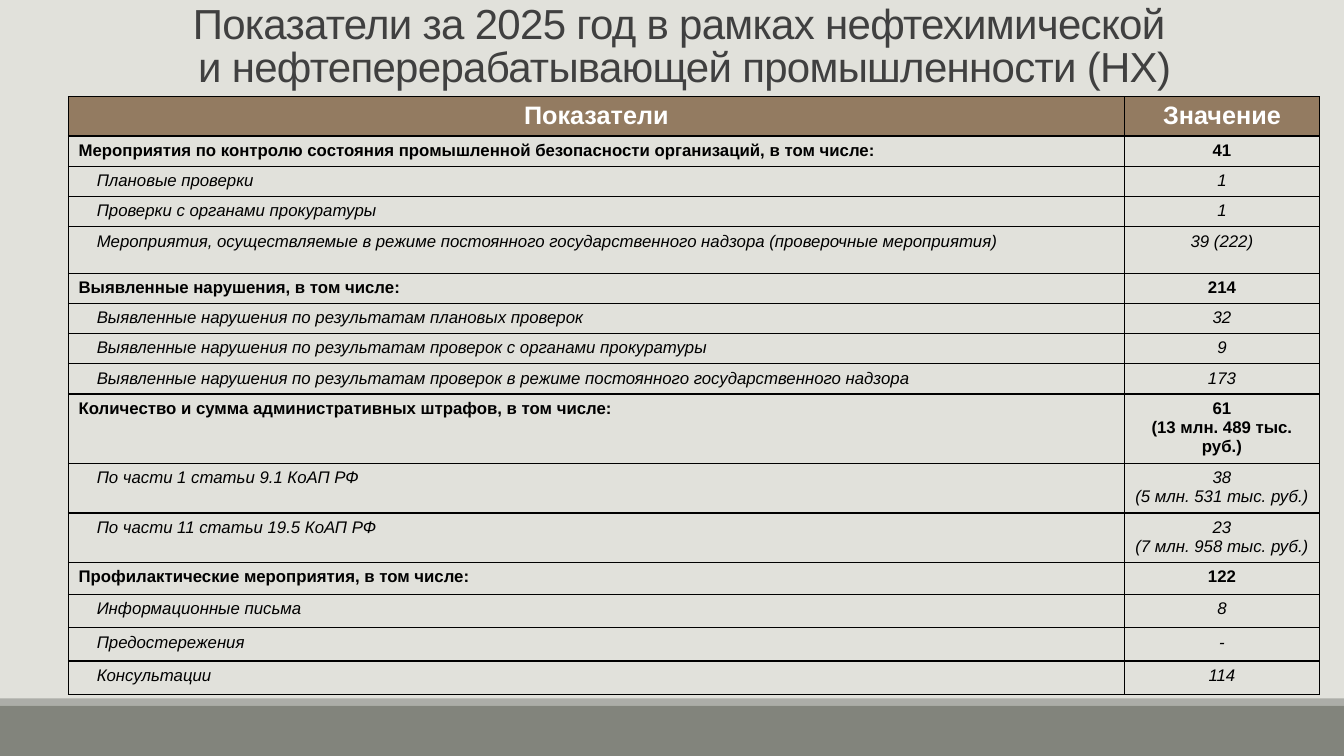
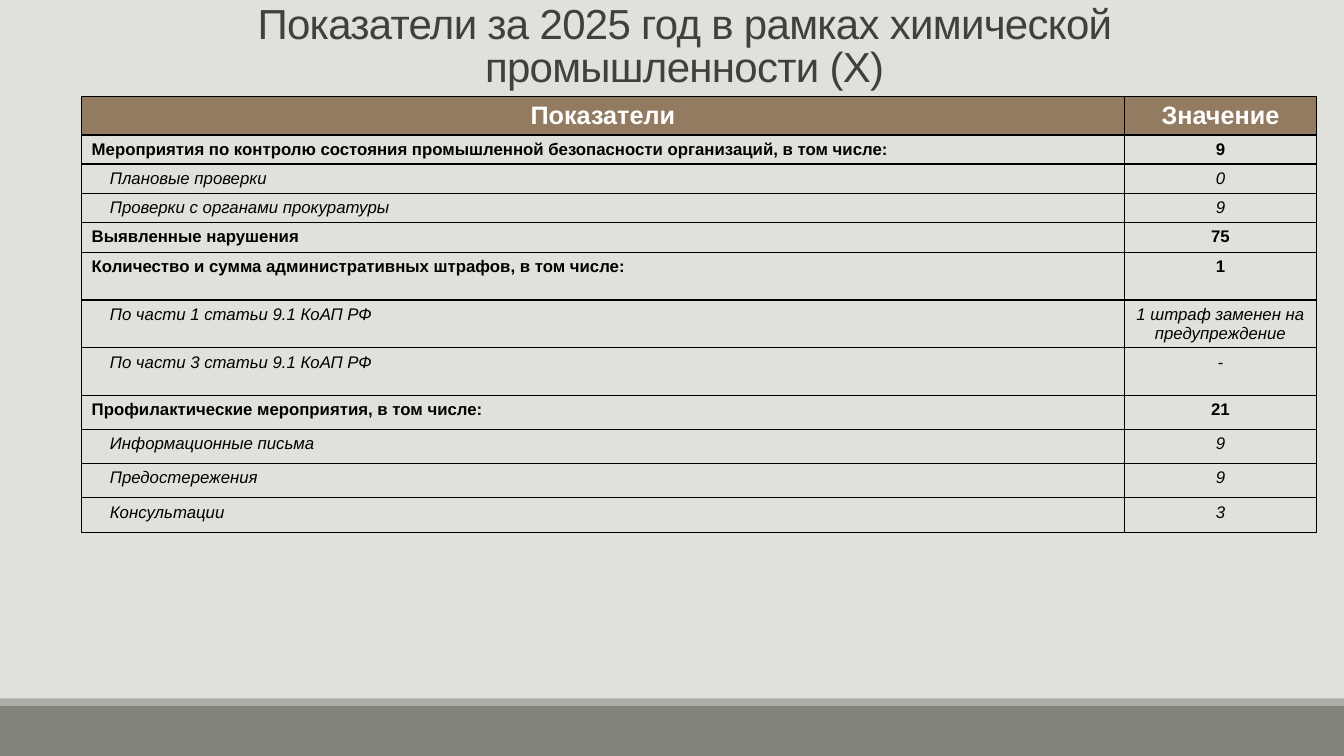
from lxml import etree
from pptx import Presentation
from pptx.dml.color import RGBColor
from pptx.enum import text
from pptx.enum.shapes import MSO_SHAPE
from pptx.oxml.ns import qn
from pptx.util import Inches, Pt

FONT = "Arial"
BACKGROUND = "E1E1DB"
FOOTER_BAND = "82847C"
FOOTER_STRIPE = "ACADA8"
TITLE_COLOR = "404040"
HEADER_FILL = "937B61"
WHITE = "FFFFFF"
BLACK = "000000"

TITLE_BOX = (1.29, 0, 11, 1.59)
TABLE_TOP = 0.96
DETAIL_INDENT = 0.18
HEADER = ("Показатели", "Значение")
SECTION, DETAIL = "section", "detail"

# Each row: kind, indicator, value, height
PETROCHEMICAL_ROWS = [
    (SECTION, "Мероприятия по контролю состояния промышленной безопасности организаций, в том числе:", "41", 0.3),
    (DETAIL, "Плановые проверки", "1", 0.3),
    (DETAIL, "Проверки с органами прокуратуры", "1", 0.3),
    (DETAIL, "Мероприятия, осуществляемые в режиме постоянного государственного надзора (проверочные мероприятия)",
     "39 (222)", 0.46),
    (SECTION, "Выявленные нарушения, в том числе:", "214", 0.3),
    (DETAIL, "Выявленные нарушения по результатам плановых проверок", "32", 0.3),
    (DETAIL, "Выявленные нарушения по результатам проверок с органами прокуратуры", "9", 0.3),
    (DETAIL, "Выявленные нарушения по результатам проверок в режиме постоянного государственного надзора",
     "173", 0.3),
    (SECTION, "Количество и сумма административных штрафов, в том числе:", "61\n(13 млн. 489 тыс. руб.)", 0.69),
    (DETAIL, "По части 1 статьи 9.1 КоАП РФ", "38\n(5 млн. 531 тыс. руб.)", 0.49),
    (DETAIL, "По части 11 статьи 19.5 КоАП РФ", "23\n(7 млн. 958 тыс. руб.)", 0.49),
    (SECTION, "Профилактические мероприятия, в том числе:", "122", 0.32),
    (DETAIL, "Информационные письма", "8", 0.33),
    (DETAIL, "Предостережения", "-", 0.33),
    (DETAIL, "Консультации", "114", 0.33),
]

CHEMICAL_ROWS = [
    (SECTION, "Мероприятия по контролю состояния промышленной безопасности организаций, в том числе:", "9", 0.28),
    (DETAIL, "Плановые проверки", "0", 0.29),
    (DETAIL, "Проверки с органами прокуратуры", "9", 0.29),
    (SECTION, "Выявленные нарушения", "75", 0.3),
    (SECTION, "Количество и сумма административных штрафов, в том числе:", "1", 0.47),
    (DETAIL, "По части 1 статьи 9.1 КоАП РФ", "1 штраф заменен на предупреждение", 0.47),
    (DETAIL, "По части 3 статьи 9.1 КоАП РФ", "-", 0.47),
    (SECTION, "Профилактические мероприятия, в том числе:", "21", 0.34),
    (DETAIL, "Информационные письма", "9", 0.34),
    (DETAIL, "Предостережения", "9", 0.34),
    (DETAIL, "Консультации", "3", 0.34),
]


def rgb(value):
    return RGBColor.from_string(value)


def write(frame, content, size, color, bold=False, italic=False, centered=True, indent=0,
          line_spacing=None, tracking=None):
    """Fill a text frame, one paragraph for each line of content."""
    frame.text = content
    for paragraph in frame.paragraphs:
        paragraph.alignment = text.PP_ALIGN.CENTER if centered else text.PP_ALIGN.LEFT
        if line_spacing:
            paragraph.line_spacing = line_spacing
        if indent:
            paragraph._p.get_or_add_pPr().set("marL", str(Inches(indent)))
        for run in paragraph.runs:
            font = run.font
            font.name, font.size = FONT, Pt(size)
            font.bold, font.italic = bold, italic
            font.color.rgb = rgb(color)
            if tracking:
                run._r.get_or_add_rPr().set("spc", str(int(tracking * 100)))


def add_borders(cell, color=BLACK, width=1):
    properties = cell._tc.get_or_add_tcPr()
    for side in ("lnL", "lnR", "lnT", "lnB"):
        line = etree.SubElement(properties, qn(f"a:{side}"), w=str(Pt(width)))
        fill = etree.SubElement(line, qn("a:solidFill"))
        etree.SubElement(fill, qn("a:srgbClr"), val=color)


def add_footer_bands(slide, layout):
    """Draw the bands and move them to the layout, behind its placeholders."""
    for top, height, color in ((7, 0.5, FOOTER_BAND), (6.93, 0.07, FOOTER_STRIPE)):
        band = slide.shapes.add_shape(
            MSO_SHAPE.RECTANGLE, 0, Inches(top), Inches(13.33), Inches(height))
        band.shadow.inherit = False
        band.fill.solid()
        band.fill.fore_color.rgb = rgb(color)
        band.line.fill.background()
        layout.shapes._spTree.insert(2, band._element)


def place_title(slide, content):
    title = slide.shapes.title
    title.left, title.top, title.width, title.height = map(Inches, TITLE_BOX)
    frame = title.text_frame
    frame.word_wrap = True
    frame.auto_size = text.MSO_AUTO_SIZE.NONE
    frame.vertical_anchor = text.MSO_ANCHOR.TOP
    write(frame, content, 30, TITLE_COLOR, line_spacing=0.85, tracking=-0.5)


def add_indicator_table(slide, left, column_widths, header_height, rows):
    heights = [header_height] + [row[-1] for row in rows]
    table = slide.shapes.add_table(
        len(heights), 2, Inches(left), Inches(TABLE_TOP),
        Inches(sum(column_widths)), Inches(sum(heights))).table
    table.horz_banding = False
    for column, width in zip(table.columns, column_widths):
        column.width = Inches(width)
    for row, height in zip(table.rows, heights):
        row.height = Inches(height)

    for cell in table.iter_cells():
        add_borders(cell)
        cell.fill.background()
    for index, label in enumerate(HEADER):
        cell = table.cell(0, index)
        cell.fill.solid()
        cell.fill.fore_color.rgb = rgb(HEADER_FILL)
        write(cell.text_frame, label, 18, WHITE, bold=True)
    for index, (kind, label, value, _) in enumerate(rows, start=1):
        style = {"size": 12, "color": BLACK, "bold": kind == SECTION, "italic": kind == DETAIL}
        write(table.cell(index, 0).text_frame, label, centered=False,
              indent=DETAIL_INDENT if kind == DETAIL else 0, **style)
        write(table.cell(index, 1).text_frame, value, **style)


def add_indicator_slide(presentation, title, **table):
    slide = presentation.slides.add_slide(presentation.slide_layouts[5])
    place_title(slide, title)
    add_indicator_table(slide, **table)
    return slide


def main():
    presentation = Presentation()
    presentation.slide_width, presentation.slide_height = Inches(13.33), Inches(7.5)
    background = presentation.slide_master.background.fill
    background.solid()
    background.fore_color.rgb = rgb(BACKGROUND)

    slide = add_indicator_slide(
        presentation,
        "Показатели за 2025 год в рамках нефтехимической \vи нефтеперерабатывающей промышленности (НХ)",
        left=0.68, column_widths=(10.47, 1.94), header_height=0.39, rows=PETROCHEMICAL_ROWS)
    add_footer_bands(slide, slide.slide_layout)
    add_indicator_slide(
        presentation,
        "Показатели за 2025 год в рамках химической промышленности (Х)",
        left=0.81, column_widths=(10.34, 1.91), header_height=0.38, rows=CHEMICAL_ROWS)
    presentation.save("out.pptx")


if __name__ == "__main__":
    main()
